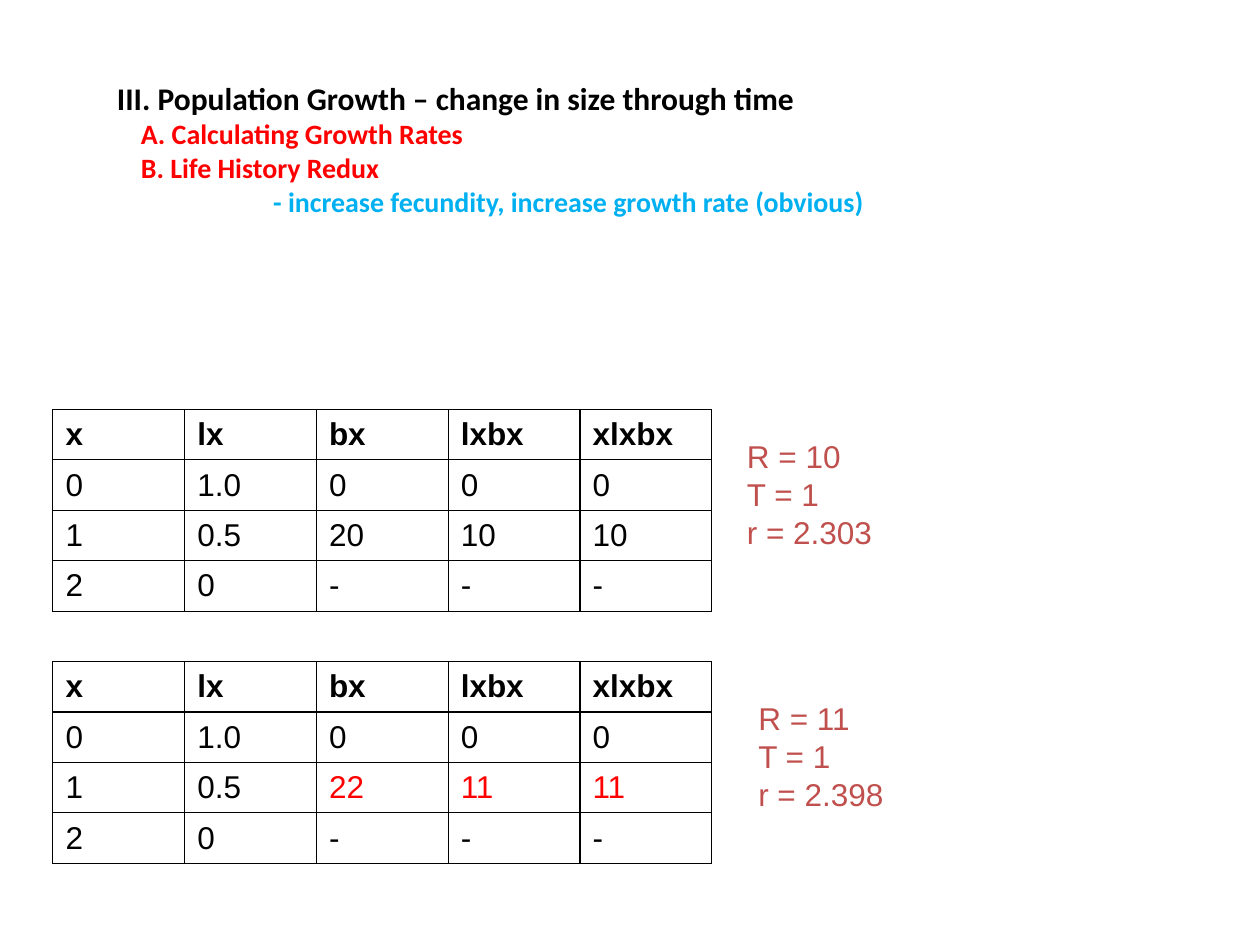
from pptx import Presentation
from pptx.dml.color import RGBColor
from pptx.enum.text import MSO_ANCHOR
from pptx.oxml import parse_xml
from pptx.oxml.ns import nsdecls
from pptx.util import Inches, Pt

THEME = {
    "ink": "000000", "red": "FF0000", "blue": "00B0F0", "result": "C0504D",
    "head": "Calibri", "body": "Arial",
    "title_size": 18, "point_size": 16, "body_size": 18, "border": 0.75,
}

OUTLINE = [
    ("III. Population Growth – change in size through time", 0, "title_size", "ink"),
    ("A. Calculating Growth Rates", 0.19, "point_size", "red"),
    ("B. Life History Redux", 0.19, "point_size", "red"),
    ("- increase fecundity, increase growth rate (obvious)", 1.24, "point_size", "blue"),
]

HEADER = ["x", "lx", "bx", "lxbx", "xlxbx"]
CASES = [
    {"top": 3.25, "middle": ["1", "0.5", "20", "10", "10"], "changed": (),
     "results": ["R = 10", "T = 1", "r = 2.303"], "results_at": (5.83, 3.42)},
    {"top": 5.25, "middle": ["1", "0.5", "22", "11", "11"], "changed": (2, 3, 4),
     "results": ["R = 11", "T = 1", "r = 2.398"], "results_at": (5.92, 5.5)},
]
TABLE_LEFT, TABLE_WIDTH, ROW_HEIGHT = 0.42, 5.23, 0.4


def write(p, text, face, size, color, bold=False):
    r = p.add_run()
    r.text = text
    formats = {"name": THEME[face], "size": Pt(THEME[size]), "bold": bold}
    for name, value in formats.items():
        setattr(r.font, name, value)
    r.font.color.rgb = RGBColor.from_string(THEME[color])


def add_text(s, left, top, width, height, lines):
    tf = s.shapes.add_textbox(*map(Inches, (left, top, width, height))).text_frame
    tf.word_wrap = True
    for i, (text, indent, *style) in enumerate(lines):
        p = tf.add_paragraph() if i else tf.paragraphs[0]
        if indent:
            p._p.get_or_add_pPr().set("marL", str(Inches(indent)))
        write(p, text, *style)


def set_borders(cell):
    tcPr = cell._tc.get_or_add_tcPr()
    for i, side in enumerate(("lnL", "lnR", "lnT", "lnB")):
        tcPr.insert(i, parse_xml(
            f'<a:{side} {nsdecls("a")} w="{Pt(THEME["border"])}"><a:solidFill>'
            f'<a:srgbClr val="{THEME["ink"]}"/></a:solidFill></a:{side}>'))


def add_life_table(s, case):
    rows = [HEADER, ["0", "1.0", "0", "0", "0"], case["middle"], ["2", "0", "-", "-", "-"]]
    table = s.shapes.add_table(
        len(rows), len(HEADER), Inches(TABLE_LEFT), Inches(case["top"]),
        Inches(TABLE_WIDTH), Inches(ROW_HEIGHT * len(rows))).table
    table.horz_banding = False
    for i, row in enumerate(rows):
        for j, text in enumerate(row):
            cell = table.cell(i, j)
            cell.fill.background()
            cell.vertical_anchor = MSO_ANCHOR.MIDDLE
            set_borders(cell)
            color = "red" if i == 2 and j in case["changed"] else "ink"
            write(cell.text_frame.paragraphs[0], text, "body", "body_size", color, i == 0)


def main():
    prs = Presentation()
    prs.slide_width, prs.slide_height = Inches(10), Inches(7.5)
    s = prs.slides.add_slide(prs.slide_layouts[6])
    for case in CASES:
        add_life_table(s, case)
        add_text(s, *case["results_at"], 3.83, 1,
                 [(text, 0, "body", "body_size", "result") for text in case["results"]])
    add_text(s, 0.83, 0.58, 7.58, 3,
             [(text, indent, "head", size, color, True) for text, indent, size, color in OUTLINE])
    prs.save("out.pptx")


if __name__ == "__main__":
    main()
